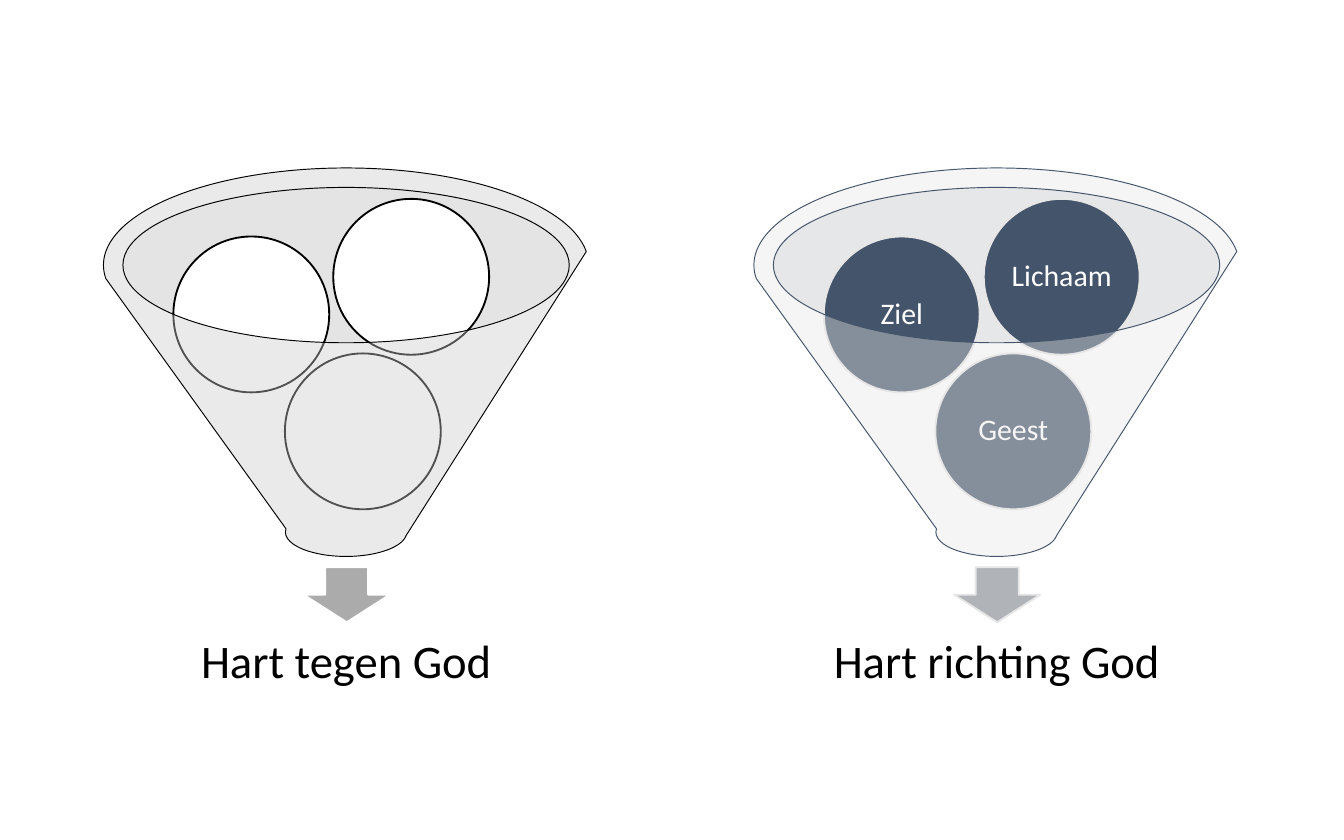
from lxml.etree import SubElement
from pptx import Presentation
from pptx.dml.color import RGBColor
from pptx.enum.shapes import MSO_SHAPE as Shape
from pptx.enum.text import MSO_ANCHOR as Anchor, PP_ALIGN as Align
from pptx.oxml.ns import qn
from pptx.util import Pt

PX = 9144
FONT = "Calibri"
BLACK = RGBColor(0x00, 0x00, 0x00)
WHITE = RGBColor(0xFF, 0xFF, 0xFF)
GREY = RGBColor(0xBD, 0xBD, 0xBD)
MID_GREY = RGBColor(0xAB, 0xAB, 0xAB)
LIGHT_GREY = RGBColor(0xCC, 0xCC, 0xCC)
SLATE = RGBColor(0x44, 0x54, 0x6A)
SLATE_RIM = RGBColor(0xC1, 0xC3, 0xC7)
SLATE_ARROW = RGBColor(0xB0, 0xB4, 0xB9)
PALE = RGBColor(0xE7, 0xE6, 0xE6)

BALL_SIZE = 116
BALL_SPOTS = [(135, 138), (52, 51), (171, 23)]
FUNNELS = [
    dict(left=77, caption="Hart tegen God", labels=["", "", ""],
         rim=GREY, arrow=(MID_GREY, WHITE), ball=(WHITE, BLACK),
         cone=(LIGHT_GREY, BLACK)),
    dict(left=561, caption="Hart richting God", labels=["Geest", "Ziel", "Lichaam"],
         rim=SLATE_RIM, arrow=(SLATE_ARROW, PALE), ball=(SLATE, PALE),
         cone=(PALE, SLATE)),
]


class FunnelPage:
    """Draws funnel diagram elements on one slide in a shared style."""

    def __init__(self, page):
        """Keep the slide to draw on."""
        self.page = page

    def shape(self, kind, bounds, fill, line=None, width=1, opacity=100):
        """Add a preset shape with a flat fill and an optional outline."""
        shape = self.page.shapes.add_shape(kind, *(n * PX for n in bounds))
        shape.shadow.inherit = False
        shape.fill.solid()
        shape.fill.fore_color.rgb = fill
        if opacity < 100:
            color = shape.element.spPr.find(".//" + qn("a:srgbClr"))
            SubElement(color, qn("a:alpha")).set("val", str(opacity * 1000))
        if line is None:
            shape.line.fill.background()
        else:
            shape.line.color.rgb = line
            shape.line.width = Pt(width)
        return shape

    def label(self, box, text, size, color, wrap):
        """Put one centred line of text in a box."""
        frame = box.text_frame
        frame.word_wrap = wrap
        frame.vertical_anchor = Anchor.MIDDLE
        frame.margin_left = frame.margin_right = 2 * PX
        frame.margin_top = frame.margin_bottom = 2 * PX
        para = frame.paragraphs[0]
        para.text = text
        para.alignment = Align.CENTER
        para.line_spacing = 0.9
        para.font.name = FONT
        para.font.size = Pt(size)
        para.font.color.rgb = color

    def ball(self, left, top, colors, text):
        """Add a ball with an optional label."""
        bounds = (left, top, BALL_SIZE, BALL_SIZE)
        ball = self.shape(Shape.OVAL, bounds, *colors)
        if text:
            self.label(ball, text, 16, WHITE, False)

    def caption(self, bounds, text):
        """Add the outcome under the arrow."""
        box = self.page.shapes.add_textbox(*(n * PX for n in bounds))
        self.label(box, text, 25, BLACK, True)

    def funnel(self, left, caption, labels, rim, arrow, ball, cone, top=125):
        """Add a whole funnel with its balls, arrow and caption."""
        self.shape(Shape.OVAL, (left + 14, top + 14, 333, 116), rim, opacity=40)
        self.shape(Shape.DOWN_ARROW, (left + 149, top + 297, 64, 41), *arrow)
        self.caption((left + 26, top + 330, 309, 77), caption)
        for (across, down), text in zip(BALL_SPOTS, labels):
            self.ball(left + across, top + down, ball, text)
        self.shape(Shape.FUNNEL, (left, top, 361, 289), *cone, width=0.5, opacity=40)


def main():
    """Build the deck."""
    deck = Presentation()
    deck.slide_width, deck.slide_height = 1000 * PX, 625 * PX
    page = FunnelPage(deck.slides.add_slide(deck.slide_layouts[6]))
    for funnel in FUNNELS:
        page.funnel(**funnel)
    deck.save("out.pptx")


if __name__ == "__main__":
    main()
